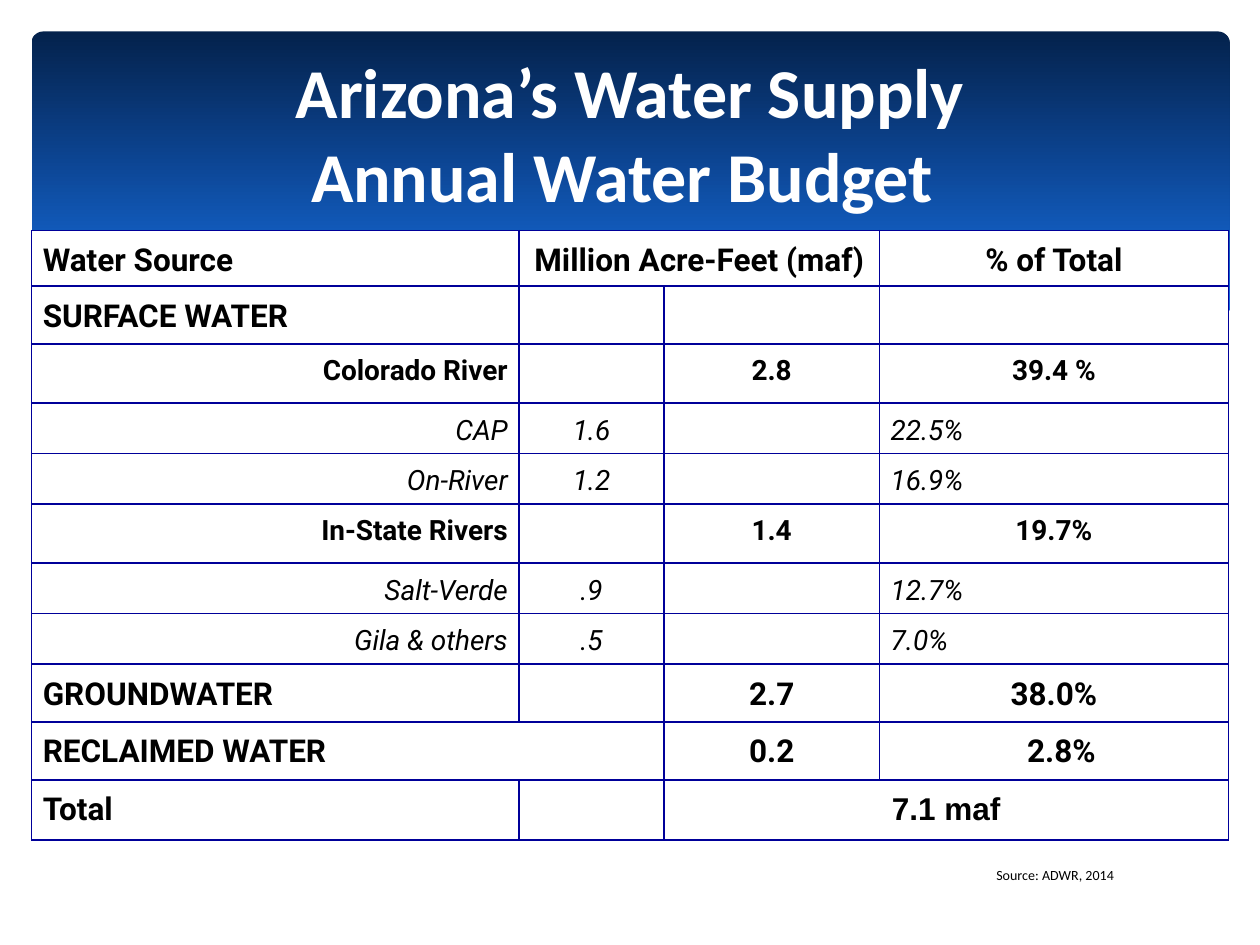
from lxml.etree import SubElement
from pptx import Presentation
from pptx.dml.color import RGBColor
from pptx.enum.shapes import MSO_SHAPE as Shape
from pptx.enum.text import MSO_ANCHOR as Anchor, PP_ALIGN as Align
from pptx.oxml.ns import qn
from pptx.util import Inches, Pt

COLORS = {"navy": "04224C", "blue": "1876F4", "white": "FFFFFF",
          "black": "000000", "border": "000099"}
TITLE = "Arizona’s Water Supply\vAnnual Water Budget "
SOURCE = "Source: ADWR, 2014"
COLUMN_WIDTHS = [3.87, 1.15, 1.71, 2.77]
LEFT, CENTER, RIGHT = Align.LEFT, Align.CENTER, Align.RIGHT
WAVE = [(9.77, 2.46), (9.4, 2.59), (8.99, 2.69), (8.5, 2.75), (8.09, 2.77),
        (7.61, 2.75), (7.08, 2.7), (6.48, 2.62), (5.79, 2.5), (5.03, 2.33),
        (4.47, 2.2), (3.91, 2.07), (3.4, 1.97), (2.92, 1.9), (2.5, 1.86),
        (1.93, 1.84), (1.46, 1.85), (1.06, 1.89), (0.67, 1.97), (0.4, 2.05),
        (0.23, 2.13), (0.23, 3.29), (9.77, 3.29)]

STYLES = {
    "main": dict(size=18, bold=True, aligns=[LEFT, CENTER, CENTER, CENTER]),
    "river": dict(size=16, bold=True, aligns=[RIGHT, CENTER, CENTER, CENTER]),
    "detail": dict(size=16, italic=True, aligns=[RIGHT, CENTER, CENTER, LEFT]),
}
ROWS = [
    ("main", 0.44, ["Water Source", "Million Acre-Feet (maf)", "", "% of Total"]),
    ("main", 0.46, ["SURFACE WATER", "", "", ""]),
    ("river", 0.47, ["Colorado River", "", "2.8", "39.4 %"]),
    ("detail", 0.4, ["CAP", "1.6", "", "22.5%"]),
    ("detail", 0.4, ["On-River", "1.2", "", "16.9%"]),
    ("river", 0.47, ["In-State Rivers", "", "1.4", "19.7%"]),
    ("detail", 0.4, ["Salt-Verde", ".9", "", "12.7%"]),
    ("detail", 0.4, ["Gila & others", ".5", "", "7.0%"]),
    ("main", 0.46, ["GROUNDWATER", "", "2.7", "38.0%"]),
    ("main", 0.46, ["RECLAIMED WATER", "", "0.2", "2.8%"]),
    ("main", 0.48, ["Total", "", "7.1 maf", ""]),
]
MERGES = [(0, 1, 2), (9, 0, 1), (10, 2, 3)]
RECLAIMED_SHARE, TOTAL_VALUE = (9, 3), (10, 2)


def color(name):
    return RGBColor.from_string(COLORS[name])


def write(frame, text, size, font="Roboto", ink="black", bold=False,
          italic=False, align=CENTER, spacing=None):
    para = frame.paragraphs[0]
    para.text = text
    para.alignment = align
    if spacing:
        para.line_spacing = spacing
    for span in para.runs:
        span.font.name = font
        span.font.size = Pt(size)
        span.font.bold = bold
        span.font.italic = italic
        span.font.color.rgb = color(ink)


def add_text(page, area, text, anchor=Anchor.TOP, **style):
    box = page.shapes.add_textbox(*map(Inches, area))
    box.text_frame.word_wrap = True
    box.text_frame.vertical_anchor = anchor
    write(box.text_frame, text, font="Calibri", **style)


def add_banner(page):
    banner = page.shapes.add_shape(
        Shape.ROUNDED_RECTANGLE, *map(Inches, (0.25, 0.25, 9.51, 2.7)))
    banner.adjustments[0] = 0.034
    banner.shadow.inherit = False
    banner.line.fill.background()
    banner.fill.gradient()
    banner.fill.gradient_angle = 270
    for stop, (position, name) in zip(banner.fill.gradient_stops,
                                      [(0, "navy"), (0.9, "blue")]):
        stop.position = position
        stop.color.rgb = color(name)


def add_wave(page):
    points = [(Inches(x), Inches(y)) for x, y in WAVE]
    builder = page.shapes.build_freeform(*points[0])
    builder.add_line_segments(points[1:], close=True)
    wave = builder.convert_to_shape()
    wave.shadow.inherit = False
    wave.line.fill.background()
    wave.fill.solid()
    wave.fill.fore_color.rgb = color("white")


def format_cell(cell):
    cell.margin_left = cell.margin_right = Inches(0.09)
    cell.margin_top = cell.margin_bottom = Inches(0.04)
    properties = cell._tc.get_or_add_tcPr()
    for side in ("a:lnL", "a:lnR", "a:lnT", "a:lnB"):
        line = SubElement(properties, qn(side), w=str(Pt(1)))
        solid = SubElement(line, qn("a:solidFill"))
        SubElement(solid, qn("a:srgbClr"), val=COLORS["border"])
    cell.fill.solid()
    cell.fill.fore_color.rgb = color("white")


def add_budget(page):
    heights = [height for _, height, _ in ROWS]
    table = page.shapes.add_table(
        len(ROWS), len(COLUMN_WIDTHS), Inches(0.25), Inches(1.83),
        Inches(sum(COLUMN_WIDTHS)), Inches(sum(heights))).table
    table.first_row = table.horz_banding = False
    for column, width in zip(table.columns, COLUMN_WIDTHS):
        column.width = Inches(width)
    for r, (kind, height, texts) in enumerate(ROWS):
        table.rows[r].height = Inches(height)
        style = dict(STYLES[kind])
        aligns = style.pop("aligns")
        for c, text in enumerate(texts):
            cell = table.cell(r, c)
            format_cell(cell)
            if text:
                font = "Arial" if (r, c) == TOTAL_VALUE else "Roboto"
                write(cell.text_frame, text, font=font, align=aligns[c],
                      spacing=1.19, **style)
    for r, first, last in MERGES:
        table.cell(r, first).merge(table.cell(r, last))
    table.cell(*RECLAIMED_SHARE).margin_left = Inches(0.21)


def main():
    deck = Presentation()
    deck.slide_width, deck.slide_height = Inches(10), Inches(7.5)
    page = deck.slides.add_slide(deck.slide_layouts[6])
    add_banner(page)
    add_wave(page)
    add_budget(page)
    add_text(page, (0.5, 0.37, 9, 1.37), TITLE, Anchor.MIDDLE,
             size=40, bold=True, ink="white")
    add_text(page, (7.75, 6.83, 1.25, 0.24), SOURCE, size=8)
    deck.save("out.pptx")


if __name__ == "__main__":
    main()
